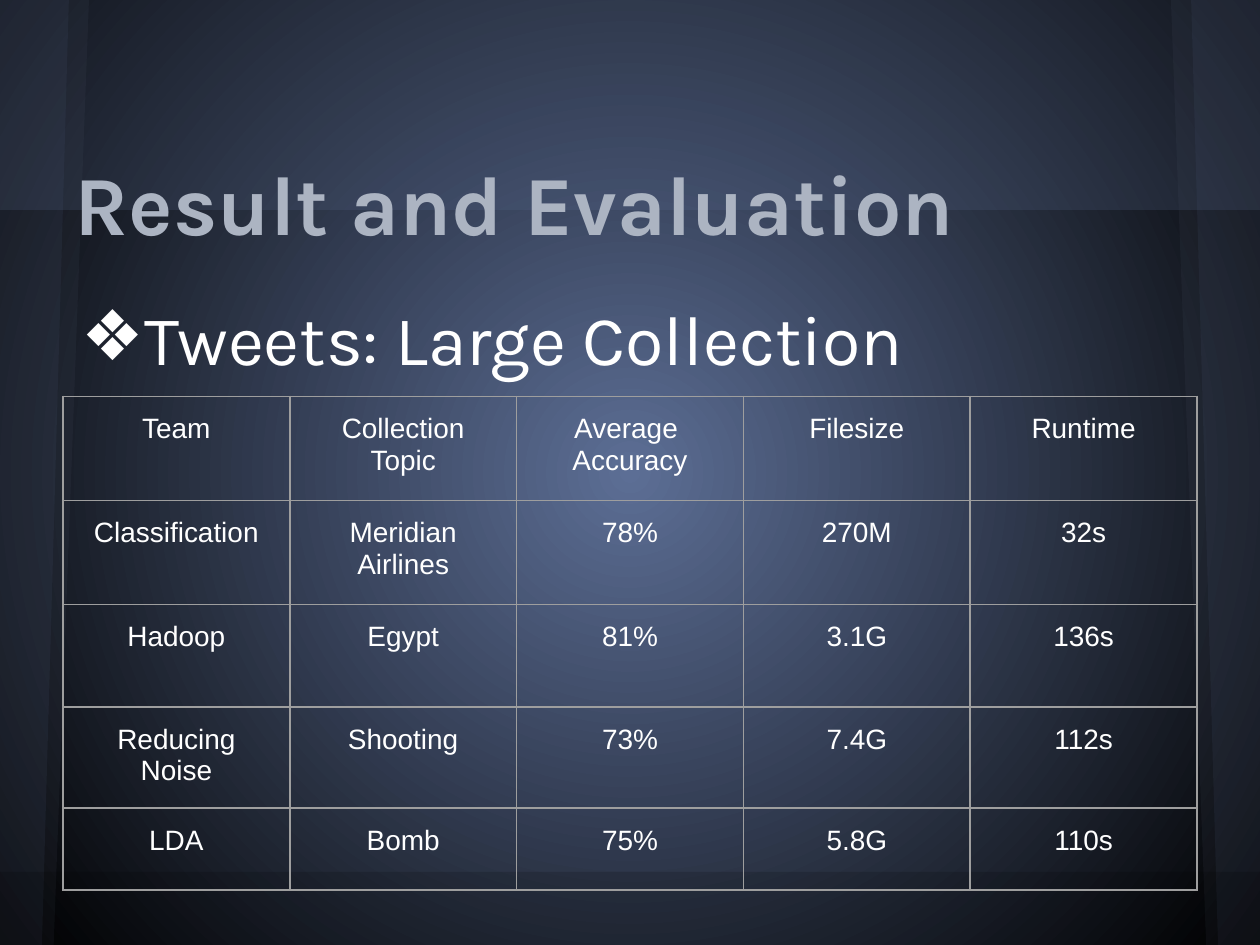
"""Build the slide with the results table for the large tweet collections."""
import dataclasses
import typing

import lxml.etree
import pptx
import pptx.dml.color
import pptx.enum.shapes
import pptx.enum.text
import pptx.oxml.ns
import pptx.util

Inches = pptx.util.Inches
ALIGN = pptx.enum.text.PP_ALIGN
ANCHOR = pptx.enum.text.MSO_ANCHOR

WIDTH = 7.5
HEIGHT = WIDTH * 3 / 4
CONTENT_WIDTH = 6.75
CONTENT_LEFT = (WIDTH - CONTENT_WIDTH) / 2
NAVY, SLATE, BLACK, WHITE = "5C6E95", "5A6378", "000000", "FFFFFF"
TITLE_GRAY, GRID_GRAY = "ACB4C2", "9E9E9E"


@dataclasses.dataclass(frozen=True)
class Band:
    top: float
    height: float
    color: str
    opacity: int


@dataclasses.dataclass(frozen=True)
class SidePanel:
    top_width: float
    bottom_width: float
    color: str
    opacity: int = 10


TOP_BAND = Band(0, 1.25, NAVY, 20)
BOTTOM_BAND = Band(5.19, HEIGHT - 5.19, BLACK, 15)
SIDE_PANELS = [SidePanel(0.53, 0.32, SLATE), SidePanel(0.41, 0.25, NAVY)]

RESULTS = [
    ["Team", "Collection\nTopic", "Average \nAccuracy", "Filesize", "Runtime"],
    ["Classification", "Meridian Airlines", "78%", "270M", "32s"],
    ["Hadoop", "Egypt", "81%", "3.1G", "136s"],
    ["Reducing Noise", "Shooting", "73%", "7.4G", "112s"],
    ["LDA", "Bomb", "75%", "5.8G", "110s"],
]
ROW_HEIGHTS = [0.62, 0.62, 0.61, 0.49, 0.49]


def rgb(color: str) -> pptx.dml.color.RGBColor:
    """Turn a hex string into a colour."""
    return pptx.dml.color.RGBColor.from_string(color)


def add_node(parent: typing.Any, tag: str, **attributes: str) -> typing.Any:
    """Append a DrawingML element."""
    return lxml.etree.SubElement(parent, pptx.oxml.ns.qn(tag), attributes)


def paint(shape: typing.Any, color: str, opacity: int) -> None:
    """Give a shape a translucent fill without line or shadow."""
    shape.shadow.inherit = False
    shape.fill.solid()
    shape.fill.fore_color.rgb = rgb(color)
    shape.line.fill.background()
    fill_color = shape.element.xpath("./p:spPr/a:solidFill/a:srgbClr")[0]
    add_node(fill_color, "a:alpha", val=str(opacity * 1000))


def paint_background(slide: typing.Any) -> None:
    """Fill the background with a gradient from the centre outwards."""
    fill = slide.background.fill
    fill.gradient()
    for stop, color in zip(fill.gradient_stops, (NAVY, BLACK)):
        stop.color.rgb = rgb(color)
    gradient = slide.element.xpath(".//p:bgPr/a:gradFill")[0]
    for linear in gradient.xpath("./a:lin"):
        gradient.remove(linear)
    circle = add_node(gradient, "a:path", path="circle")
    add_node(circle, "a:fillToRect", l="50000", t="50000", r="50000", b="50000")


def draw_band(slide: typing.Any, band: Band) -> None:
    """Draw a band across the slide."""
    strip = slide.shapes.add_shape(
        pptx.enum.shapes.MSO_SHAPE.RECTANGLE,
        0, Inches(band.top), Inches(WIDTH), Inches(band.height))
    paint(strip, band.color, band.opacity)


def draw_side_panel(slide: typing.Any, panel: SidePanel, mirrored: bool) -> None:
    """Draw a tapered panel along the left or the right edge."""
    corners = [(0, 0), (panel.top_width, 0), (panel.bottom_width, HEIGHT), (0, HEIGHT)]
    points = [(Inches(WIDTH - x if mirrored else x), Inches(y)) for x, y in corners]
    outline = slide.shapes.build_freeform(*points[0])
    outline.add_line_segments(points[1:], close=True)
    paint(outline.convert_to_shape(), panel.color, panel.opacity)


def write(frame: typing.Any, text: str, *, font: str, size: float, color: str = WHITE,
          bold: bool = False, align: typing.Any = ALIGN.LEFT,
          anchor: typing.Any = ANCHOR.TOP, bullet: str = "") -> None:
    """Write formatted text, one paragraph a line."""
    frame.word_wrap = True
    frame.vertical_anchor = anchor
    frame.text = text
    for paragraph in frame.paragraphs:
        paragraph.alignment = align
        for run in paragraph.runs:
            run.font.name = font
            run.font.size = pptx.util.Pt(size)
            run.font.bold = bold
            run.font.color.rgb = rgb(color)
        if bullet:
            properties = paragraph._p.get_or_add_pPr()
            properties.set("marL", str(Inches(0.38)))
            properties.set("indent", str(Inches(-0.34)))
            add_node(add_node(properties, "a:buClr"), "a:srgbClr", val=color)
            add_node(properties, "a:buFont", typeface=font)
            add_node(properties, "a:buChar", char=bullet)


def add_text(slide: typing.Any, top: float, height: float, text: str,
             **text_format: typing.Any) -> None:
    """Add a text box of the content width."""
    frame = slide.shapes.add_textbox(
        Inches(CONTENT_LEFT), Inches(top), Inches(CONTENT_WIDTH), Inches(height)).text_frame
    frame.margin_left = frame.margin_right = Inches(0.07)
    frame.margin_top = frame.margin_bottom = Inches(0.07)
    write(frame, text, **text_format)


def format_cell(cell: typing.Any, text: str) -> None:
    """Fill in a table cell with text, margins and borders."""
    cell.margin_left = cell.margin_right = Inches(0.1)
    cell.margin_top = cell.margin_bottom = Inches(0.1)
    write(cell.text_frame, text, font="Arial", size=12, align=ALIGN.CENTER)
    properties = cell._tc.get_or_add_tcPr()
    for side in ("a:lnL", "a:lnR", "a:lnT", "a:lnB"):
        border = add_node(properties, side, w=str(pptx.util.Pt(0.75)))
        add_node(add_node(border, "a:solidFill"), "a:srgbClr", val=GRID_GRAY)
    cell.fill.background()


def add_results(slide: typing.Any) -> None:
    """Add the results table."""
    results = slide.shapes.add_table(
        len(RESULTS), len(RESULTS[0]), Inches(CONTENT_LEFT), Inches(2.36),
        Inches(CONTENT_WIDTH), Inches(sum(ROW_HEIGHTS))).table
    results.first_row = results.horz_banding = False
    for row, height, texts in zip(results.rows, ROW_HEIGHTS, RESULTS):
        row.height = Inches(height)
        for cell, text in zip(row.cells, texts):
            format_cell(cell, text)


def main() -> None:
    """Build and save the presentation."""
    presentation = pptx.Presentation()
    presentation.slide_width = Inches(WIDTH)
    presentation.slide_height = Inches(HEIGHT)
    slide = presentation.slides.add_slide(presentation.slide_layouts[6])

    paint_background(slide)
    draw_band(slide, TOP_BAND)
    for mirrored in (False, True):
        for panel in SIDE_PANELS:
            draw_side_panel(slide, panel, mirrored)
    draw_band(slide, BOTTOM_BAND)

    add_text(slide, 0.87, 0.7, "Result and Evaluation", font="Karla", size=36,
             color=TITLE_GRAY, bold=True, anchor=ANCHOR.BOTTOM)
    add_text(slide, 1.69, 3.06, "Tweets: Large Collection", font="Karla", size=30,
             bullet="❖")
    add_results(slide)
    presentation.save("out.pptx")


if __name__ == "__main__":
    main()
